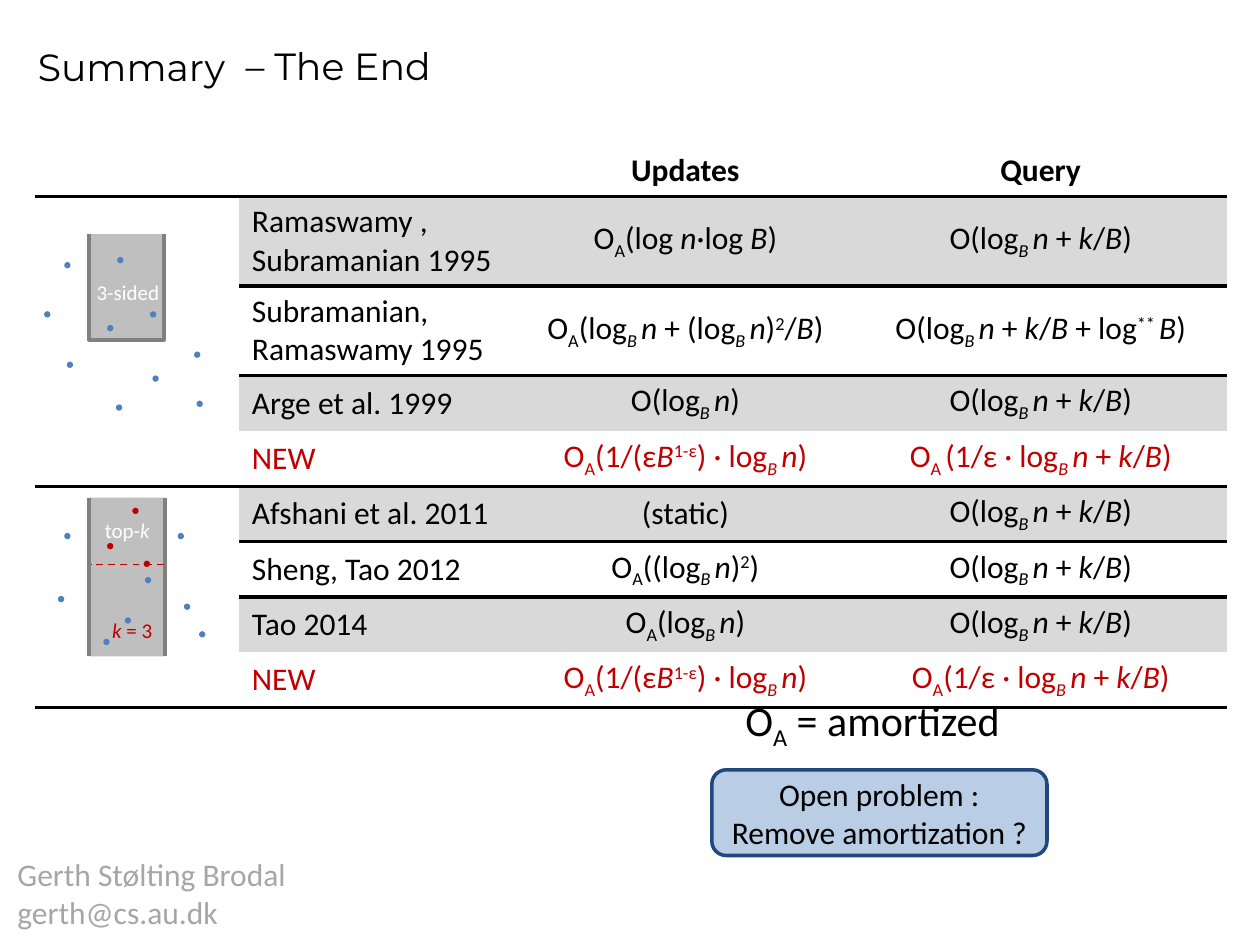
from lxml import etree
from pptx import Presentation
from pptx.dml.color import RGBColor
from pptx.enum.dml import MSO_LINE
from pptx.enum.shapes import MSO_CONNECTOR, MSO_SHAPE
from pptx.enum.text import MSO_ANCHOR, PP_ALIGN
from pptx.oxml.ns import qn
from pptx.util import Inches, Pt

LEFT, CENTER = PP_ALIGN.LEFT, PP_ALIGN.CENTER
TOP, MIDDLE = MSO_ANCHOR.TOP, MSO_ANCHOR.MIDDLE
OVAL, RECTANGLE = MSO_SHAPE.OVAL, MSO_SHAPE.RECTANGLE
ROUNDED = MSO_SHAPE.ROUNDED_RECTANGLE
STRAIGHT, DASH = MSO_CONNECTOR.STRAIGHT, MSO_LINE.DASH
BLACK = RGBColor(0x00, 0x00, 0x00)
WHITE = RGBColor(0xFF, 0xFF, 0xFF)
RED = RGBColor(0xC0, 0x00, 0x00)
BLUE = RGBColor(0x4F, 0x81, 0xBD)
NAVY = RGBColor(0x1F, 0x49, 0x7D)
PALE_BLUE = RGBColor(0xB9, 0xCD, 0xE5)
BAND = RGBColor(0xD9, 0xD9, 0xD9)
REGION = RGBColor(0xBF, 0xBF, 0xBF)
EDGE = RGBColor(0x80, 0x80, 0x80)
FOOTER = RGBColor(0xA6, 0xA6, 0xA6)
NO_STYLE = "{2D5ABB26-0587-4C30-8999-92F81FD0307C}"
BASELINES = {"_": "-25000", "^": "30000"}


def write(frame, text, size=18, color=BLACK, align=CENTER, font="Calibri", bold=False):
    frame.word_wrap = True
    for index, line in enumerate(text.split("\n")):
        paragraph = frame.add_paragraph() if index else frame.paragraphs[0]
        paragraph.alignment = align
        for segment in line.split("|"):
            if segment == "\v":
                paragraph.add_line_break()
                continue
            words = segment.lstrip("~_^")
            marks = segment[:len(segment) - len(words)]
            run = paragraph.add_run()
            run.text = words
            formats = {"size": Pt(size), "name": font, "bold": bold, "italic": "~" in marks}
            for name, value in formats.items():
                setattr(run.font, name, value)
            run.font.color.rgb = color
            for mark in marks.replace("~", ""):
                run.font._element.set("baseline", BASELINES[mark])


def paint(shape, fill, line=None, width=2.25):
    shape.shadow.inherit = False
    shape.fill.solid()
    shape.fill.fore_color.rgb = fill
    if line is None:
        shape.line.fill.background()
    else:
        shape.line.color.rgb = line
        shape.line.width = Pt(width)


presentation = Presentation()
presentation.slide_width, presentation.slide_height = Inches(10), Inches(7.5)
slide = presentation.slides.add_slide(presentation.slide_layouts[5])

title = slide.shapes.title
title.left, title.top, title.width, title.height = map(Inches, (0.2, 0.3, 1.89, 0.61))
title.text_frame.vertical_anchor = TOP
write(title.text_frame, "Summary", 21.6, align=LEFT, font="Montserrat")

LOG_N = "log|~_B |~n"
QUERY = f"O({LOG_N}| + |~k|/|~B|)"
NEW_UPDATE = f"O|_A|(1/(ε|~B|^1-ε|) · {LOG_N}|)"
rows = [
    ("", "Updates", "Query"),
    ("Ramaswamy , Subramanian 1995", "O|_A|(log |~n|·log |~B|)", QUERY),
    ("Subramanian, Ramaswamy 1995", f"O|_A|({LOG_N} |+ ({LOG_N}|)|^2|/|~B|)",
     f"O({LOG_N}| + |~k|/|~B |+ log|^** |~B|)"),
    ("Arge et al. 1999", f"O({LOG_N}|)", QUERY),
    ("NEW", NEW_UPDATE, f"O|_A |(1/ε · {LOG_N}| + |~k|/|~B|)"),
    ("Afshani et al. 2011", "(static)", QUERY),
    ("Sheng, Tao 2012", f"O|_A|(({LOG_N}|)|^2|)", QUERY),
    ("Tao 2014", f"O|_A|({LOG_N}|)", QUERY),
    ("NEW", NEW_UPDATE, f"O|_A|(1/ε · {LOG_N}| + |~k|/|~B|)"),
]
RULED_ROWS = (0, 1, 4, 5, 8)

table = slide.shapes.add_table(len(rows), 4, Inches(0.28), Inches(1.15),
                               Inches(9.45), Inches(3.69)).table
table._tbl.tblPr.find(qn("a:tableStyleId")).text = NO_STYLE
for column, width in zip(table.columns, (1.62, 2.2, 2.68, 2.96)):
    column.width = Inches(width)
for first in (1, 5):
    table.cell(first, 0).merge(table.cell(first + 3, 0))

for row_index, texts in enumerate(rows):
    table.rows[row_index].height = Inches(0.41)
    for column_index, text in enumerate(("", *texts)):
        cell = table.cell(row_index, column_index)
        properties = cell._tc.get_or_add_tcPr()
        for tag, ruled in (("a:lnT", row_index - 1 in RULED_ROWS and not cell.is_spanned),
                           ("a:lnB", row_index in RULED_ROWS)):
            if ruled:
                border = etree.SubElement(properties, qn(tag), w=str(Pt(2.25)))
                fill = etree.SubElement(border, qn("a:solidFill"))
                etree.SubElement(fill, qn("a:srgbClr"), val=str(BLACK))
        if column_index and row_index % 2:
            cell.fill.solid()
            cell.fill.fore_color.rgb = BAND
        else:
            cell.fill.background()
        if text:
            cell.vertical_anchor = MIDDLE if row_index else TOP
            write(cell.text_frame, text, color=RED if texts[0] == "NEW" else BLACK,
                  align=LEFT if column_index == 1 else CENTER, bold=row_index == 0)

three_sided = slide.shapes.add_group_shape().shapes
top_k = slide.shapes.add_group_shape().shapes

builder = three_sided.build_freeform(Inches(0.71), Inches(1.86))
builder.add_line_segments([(Inches(x), Inches(y)) for x, y in
                           ((0.71, 2.7), (1.3, 2.7), (1.3, 1.86))], close=False)
paint(builder.convert_to_shape(), REGION, EDGE)

paint(top_k.add_shape(RECTANGLE, Inches(0.71), Inches(3.95), Inches(0.6), Inches(1.26)), REGION)
for x1, y1, x2, y2, color, width, dash in (
        (0.71, 3.95, 0.71, 5.21, EDGE, 2.25, None),
        (1.31, 3.95, 1.31, 5.21, EDGE, 2.25, None),
        (1.3, 4.48, 0.72, 4.48, RED, 1, DASH)):
    connector = top_k.add_connector(STRAIGHT, *map(Inches, (x1, y1, x2, y2)))
    connector.line.color.rgb = color
    connector.line.width = Pt(width)
    connector.line.dash_style = dash
    etree.SubElement(connector._element.spPr, qn("a:effectLst"))

for shapes, color, points in (
        (three_sided, BLUE, ((1.56, 3.18), (0.93, 2.04), (1.21, 2.98), (0.85, 2.58),
                             (0.51, 2.08), (0.35, 2.47), (1.54, 2.79), (0.53, 2.87),
                             (0.92, 3.21), (1.19, 2.47))),
        (top_k, BLUE, ((0.82, 5.07), (1.15, 4.58), (0.46, 4.73), (0.99, 4.9),
                       (1.58, 5.01), (1.46, 4.79), (1.41, 4.23), (0.51, 4.23))),
        (top_k, RED, ((1.05, 4.03), (1.14, 4.45), (0.85, 4.31)))):
    for x, y in points:
        paint(shapes.add_shape(OVAL, Inches(x), Inches(y), Inches(0.05), Inches(0.05)), color)

for shapes, box, text, formats in (
        (three_sided, (0.71, 2.17, 0.61, 0.3), "3-sided", {"size": 12, "color": WHITE}),
        (top_k, (0.71, 4.06, 0.6, 0.3), "top-|~k", {"size": 12, "color": WHITE}),
        (top_k, (0.75, 4.85, 0.6, 0.3), "~k| = 3", {"size": 12, "color": RED}),
        (slide.shapes, (4.21, 5.46, 5.43, 0.5), "O|_A| = amortized", {"size": 24}),
        (slide.shapes, (1.85, 0.29, 1.89, 0.61), "– The End",
         {"size": 21.6, "align": LEFT, "font": "Montserrat"}),
        (slide.shapes, (0.04, 6.74, 10, 0.71), "Gerth Stølting Brodal\ngerth@cs.au.dk",
         {"color": FOOTER, "align": LEFT})):
    frame = shapes.add_textbox(*map(Inches, box)).text_frame
    if shapes is three_sided:
        frame.margin_left = frame.margin_right = 0
    write(frame, text, **formats)

problem = slide.shapes.add_shape(ROUNDED, Inches(5.65), Inches(6.11), Inches(2.66), Inches(0.68))
paint(problem, PALE_BLUE, NAVY, 2)
problem.text_frame.vertical_anchor = MIDDLE
write(problem.text_frame, "Open problem :|\v|Remove amortization ?")

presentation.save("out.pptx")
